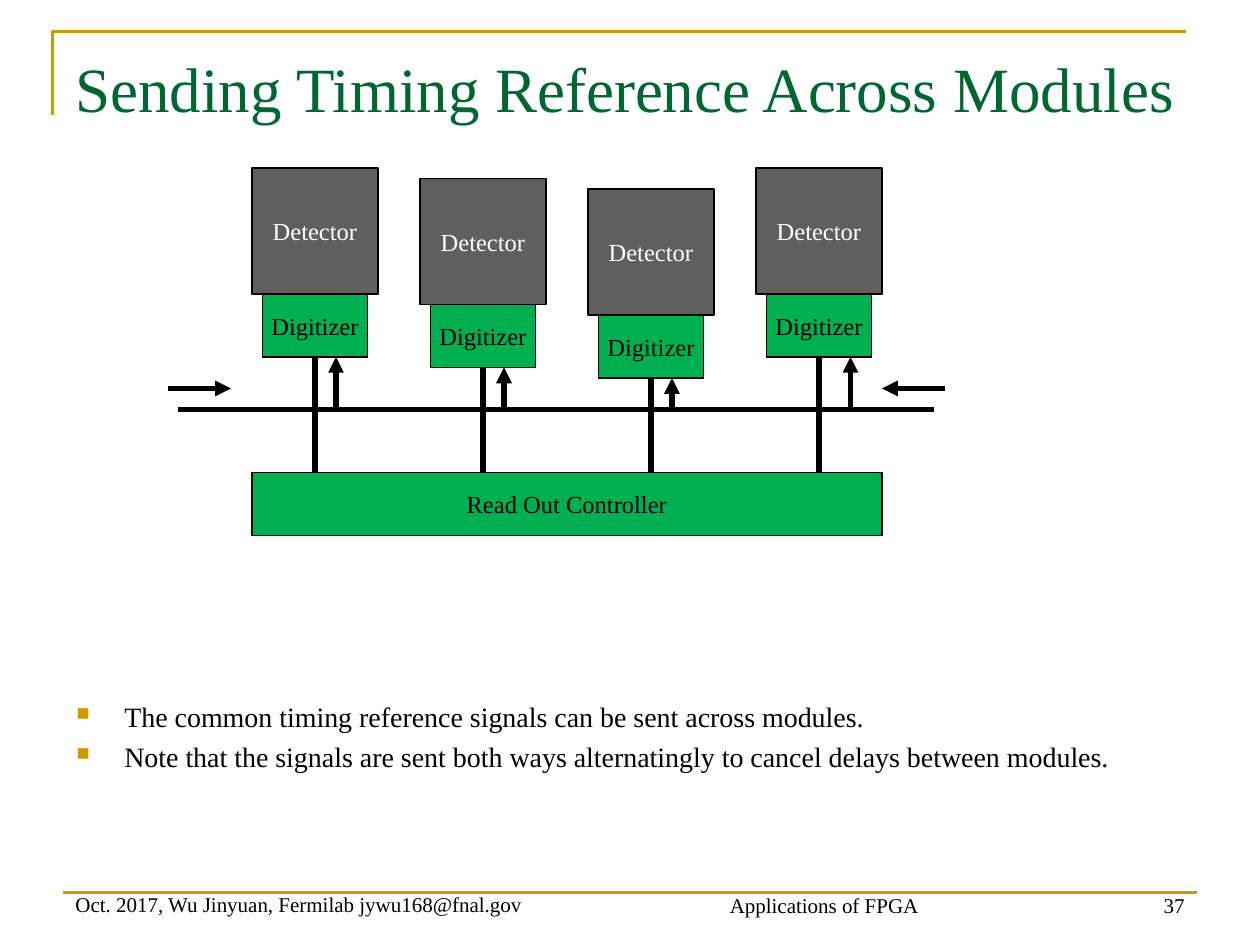
from dataclasses import dataclass

from lxml.etree import SubElement
from pptx import Presentation
from pptx.dml.color import RGBColor
from pptx.enum.shapes import MSO_CONNECTOR as CONN, MSO_SHAPE as SHAPE
from pptx.enum.text import MSO_ANCHOR as ANCHOR, PP_ALIGN as ALIGN
from pptx.oxml.ns import qn
from pptx.util import Inches, Pt


@dataclass(frozen=True)
class Theme:
    font: str = "Times New Roman"
    ink: str = "000000"
    white: str = "FFFFFF"
    title: str = "006633"
    accent: str = "CC9900"
    detector: str = "5F5F5F"
    board: str = "00B050"
    title_size: float = 36
    body_size: float = 16
    label_size: float = 14
    footer_size: float = 12
    wire: float = 3
    rule: float = 1.5
    outline: float = 0.75


T = Theme()
COLS, ROWS = 120, 90


def cell(n):
    """Length of n grid cells, twelve to the inch."""
    return Inches(n / 12)


def rgb(color):
    return RGBColor.from_string(color)


def set_font(p, size, color):
    p.font.name, p.font.size = T.font, Pt(size)
    p.font.color.rgb = rgb(color)


def add_text(s, box, text, size, color=T.ink, align=ALIGN.LEFT, anchor=ANCHOR.BOTTOM):
    tf = s.shapes.add_textbox(*map(cell, box)).text_frame
    tf.word_wrap, tf.vertical_anchor = True, anchor
    tf.text = text
    for p in tf.paragraphs:
        p.alignment = align
        set_font(p, size, color)
    return tf


def add_block(s, box, text, fill, color=T.ink):
    sp = s.shapes.add_shape(SHAPE.RECTANGLE, *map(cell, box))
    sp.shadow.inherit = False
    sp.fill.solid()
    sp.fill.fore_color.rgb = rgb(fill)
    sp.line.color.rgb, sp.line.width = rgb(T.ink), Pt(T.outline)
    tf = sp.text_frame
    tf.word_wrap, tf.vertical_anchor = False, ANCHOR.MIDDLE
    tf.text = text
    tf.paragraphs[0].alignment = ALIGN.CENTER
    set_font(tf.paragraphs[0], T.label_size, color)


def add_line(s, start, end, color=T.ink, width=T.wire, arrow=False):
    line = s.shapes.add_connector(CONN.STRAIGHT, *map(cell, (*start, *end)))
    line.line.color.rgb, line.line.width = rgb(color), Pt(width)
    props = line._element.spPr
    if arrow:
        SubElement(props.find(qn("a:ln")), qn("a:tailEnd"), type="triangle")
    SubElement(props, qn("a:effectLst"))


def header(s, x, y, w, h):
    """Corner rule along the left and top edges, with the title inside it."""
    fb = s.shapes.build_freeform(cell(x), cell(y + h))
    fb.add_line_segments([(cell(x), cell(y)), (cell(x + w), cell(y))], close=False)
    corner = fb.convert_to_shape()
    corner.shadow.inherit = False
    corner.fill.background()
    corner.line.color.rgb, corner.line.width = rgb(T.accent), Pt(T.rule)
    add_text(s, (x + 1, y + 0.6, w + 3, 9.36), "Sending Timing Reference Across Modules",
             T.title_size, T.title, anchor=ANCHOR.MIDDLE)


def diagram(s, x, y, w, h):
    """Detector stations on a timing bus, above a shared read-out controller."""
    pitch, side, board_h = 16, 12, 6
    bus_y, controller_y = y + 23, y + h - board_h
    first = x + 8
    drops, taps = (0, 1, 2, 0), (8, 8, 8, 9)
    stations = [(first + i * pitch, y + drop + side, tap)
                for i, (drop, tap) in enumerate(zip(drops, taps))]

    for left, joint, _ in stations:
        add_block(s, (left + 1, joint, side - 2, board_h), "Digitizer", T.board)
        add_block(s, (left, joint - side, side, side), "Detector", T.detector, T.white)
    add_block(s, (first, controller_y, 3 * pitch + side, board_h),
              "Read Out Controller", T.board)

    add_line(s, (x + w - 1, bus_y), (x + 1, bus_y))
    for left, joint, tap in stations:
        bottom = joint + board_h
        add_line(s, (left + side / 2, controller_y), (left + side / 2, bottom))
        add_line(s, (left + tap, bus_y), (left + tap, bottom), arrow=True)
    for edge, step in ((x, 6), (x + w, -6)):
        add_line(s, (edge, bus_y - 2), (edge + step, bus_y - 2), arrow=True)


def bullets(s, box, items):
    tf = add_text(s, box, "\n".join(items), T.body_size, anchor=ANCHOR.TOP)
    for i, p in enumerate(tf.paragraphs):
        if i:
            p.space_before = Pt(3.7)
        props = p._p.get_or_add_pPr()
        props.set("marL", str(Inches(0.38)))
        props.set("indent", str(-Inches(0.38)))
        # Bullet elements must stand before the default run properties.
        font_props = props.find(qn("a:defRPr"))
        color = SubElement(props, qn("a:buClr"))
        SubElement(color, qn("a:srgbClr"), val=T.accent)
        SubElement(props, qn("a:buSzPct"), val="65000")
        SubElement(props, qn("a:buChar"), char="■")
        props.append(font_props)


def footer(s, x, y, w):
    add_line(s, (x, y), (x + w, y), T.accent, T.rule)
    add_text(s, (x, y, 46, 2.9), "Oct. 2017, Wu Jinyuan, Fermilab jywu168@fnal.gov",
             T.footer_size)
    add_text(s, (x + 47, y - 1, 51, 4), "Applications of FPGA", T.footer_size,
             align=ALIGN.CENTER)
    add_text(s, (x + w - 9, y, 9, 3), "37", T.footer_size, align=ALIGN.RIGHT)


def main():
    prs = Presentation()
    prs.slide_width, prs.slide_height = cell(COLS), cell(ROWS)
    s = prs.slides.add_slide(prs.slide_layouts[6])
    header(s, 5, 3, 108, 8)
    diagram(s, 16, 16, 74, 35)
    bullets(s, (6.1, 66, 105, 18), [
        "The common timing reference signals can be sent across modules.",
        "Note that the signals are sent both ways alternatingly to cancel delays"
        " between modules.",
    ])
    footer(s, 6, 85, 108)
    prs.save("out.pptx")


if __name__ == "__main__":
    main()
